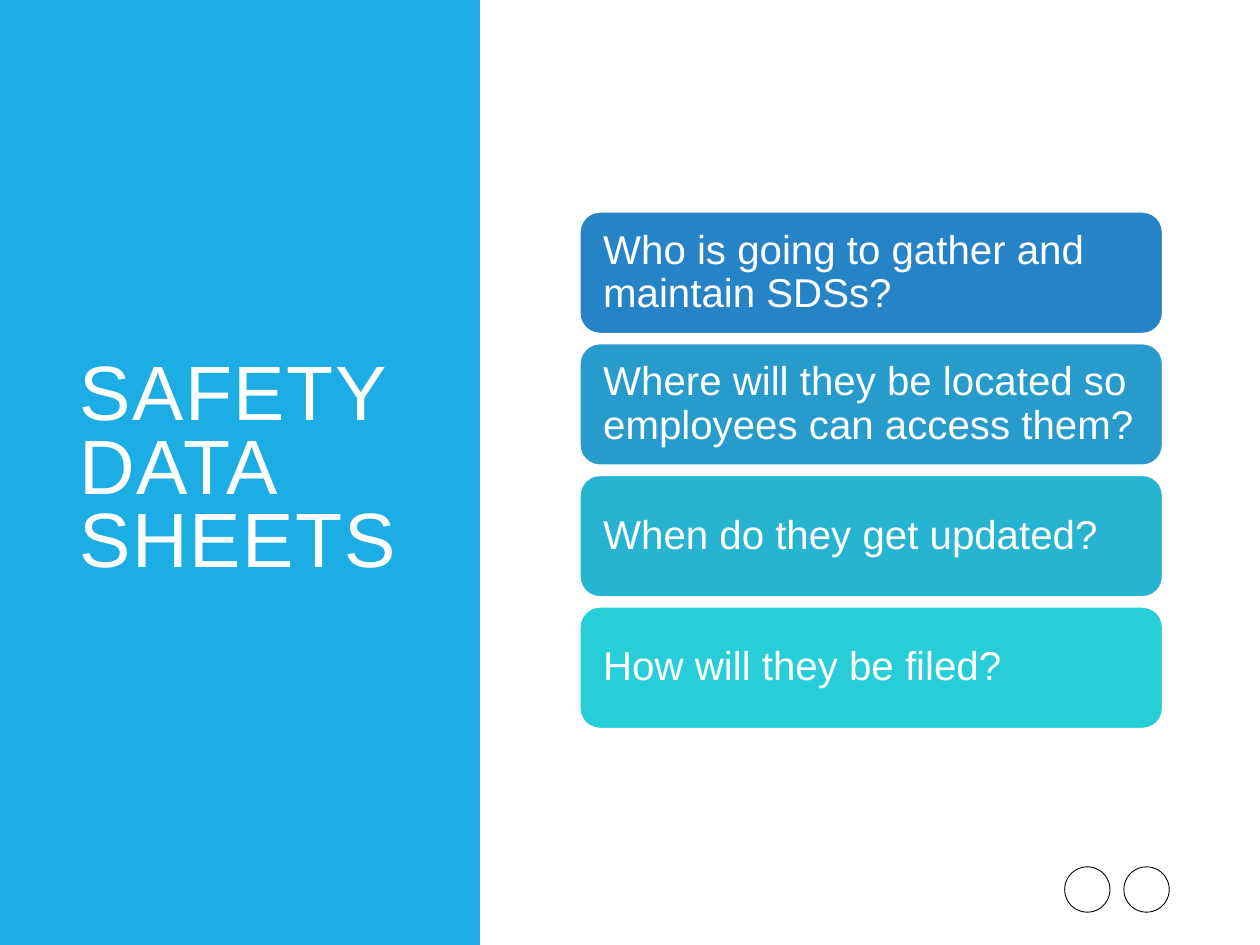
from dataclasses import dataclass

from pptx import Presentation
from pptx.dml.color import RGBColor
from pptx.enum.shapes import MSO_SHAPE
from pptx.enum.text import MSO_ANCHOR, PP_ALIGN
from pptx.util import Inches, Pt


@dataclass(frozen=True)
class Theme:
    font: str = "Arial"
    white: str = "FFFFFF"
    black: str = "000000"
    panel: str = "1CADE4"
    title_size: int = 44
    card_size: int = 23
    card_line: float = 1.25
    icon_line: float = 0.5


THEME = Theme()

CARDS = [
    ("Who is going to gather and maintain SDSs?", "2683C6"),
    ("Where will they be located so employees can access them?", "269BCC"),
    ("When do they get updated?", "27B4D1"),
    ("How will they be filed?", "27CED7"),
]


def apply_format(target, values):
    for name, value in values.items():
        setattr(target, name, value)


def add_block(slide, kind, box, fill=None, line=None, line_width=0):
    shape = slide.shapes.add_shape(kind, *map(Inches, box))
    shape.shadow.inherit = False
    if fill:
        shape.fill.solid()
        shape.fill.fore_color.rgb = RGBColor.from_string(fill)
    else:
        shape.fill.background()
    if line:
        shape.line.color.rgb = RGBColor.from_string(line)
        shape.line.width = Pt(line_width)
    else:
        shape.line.fill.background()
    return shape


def write_text(shape, text, size, line_spacing, side, edge, tracking=0):
    frame = shape.text_frame
    apply_format(frame, {
        "word_wrap": True,
        "vertical_anchor": MSO_ANCHOR.MIDDLE,
        "margin_left": Inches(side),
        "margin_right": Inches(side),
        "margin_top": Inches(edge),
        "margin_bottom": Inches(edge),
    })
    paragraph = frame.paragraphs[0]
    apply_format(paragraph, {"alignment": PP_ALIGN.LEFT, "line_spacing": line_spacing})
    run = paragraph.add_run()
    run.text = text
    apply_format(run.font, {"name": THEME.font, "size": Pt(size)})
    run.font.color.rgb = RGBColor.from_string(THEME.white)
    if tracking:
        # Letter spacing is stored in hundredths of a point
        run.font._element.set("spc", str(tracking * 100))


def add_title(slide, text):
    title = slide.shapes.add_textbox(*map(Inches, (0.53, 0.7, 2.8, 6.09)))
    write_text(title, text, THEME.title_size, 0.8, side=0.1, edge=0.05, tracking=1)


def add_cards(slide, cards):
    left, top, width, height, pitch = 4.6, 1.68, 4.63, 0.97, 1.045
    for index, (text, color) in enumerate(cards):
        card = add_block(slide, MSO_SHAPE.ROUNDED_RECTANGLE,
                         (left, top + index * pitch, width, height),
                         color, THEME.white, THEME.card_line)
        write_text(card, text, THEME.card_size, 0.9, side=0.14, edge=0.14)


def add_icon_rings(slide):
    for left in (8.45, 8.92):
        add_block(slide, MSO_SHAPE.OVAL, (left, 6.88, 0.36, 0.36),
                  line=THEME.black, line_width=THEME.icon_line)


def main():
    presentation = Presentation()
    apply_format(presentation, {"slide_width": Inches(10), "slide_height": Inches(7.5)})
    slide = presentation.slides.add_slide(presentation.slide_layouts[6])

    # Footer rings
    add_icon_rings(slide)

    # Title panel
    add_block(slide, MSO_SHAPE.RECTANGLE, (0, 0, 3.81, 7.5), THEME.panel)
    add_title(slide, "SAFETY DATA SHEETS")

    # Question cards
    add_cards(slide, CARDS)

    presentation.save("out.pptx")


if __name__ == "__main__":
    main()
